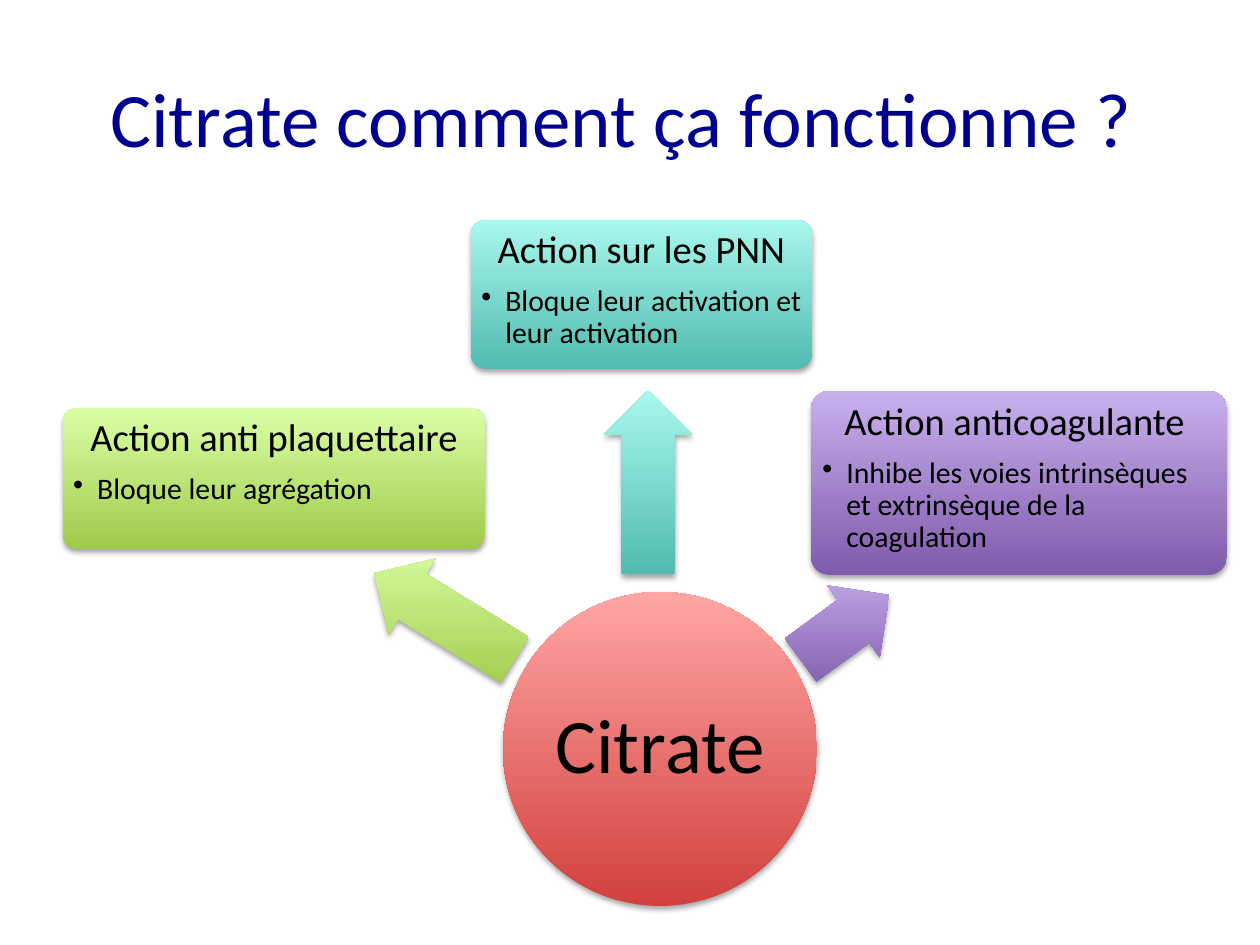
from lxml.etree import SubElement
from pptx import Presentation
from pptx.dml.color import RGBColor
from pptx.enum.shapes import MSO_SHAPE as Kind
from pptx.enum.text import MSO_ANCHOR as Anchor, PP_ALIGN as Align
from pptx.oxml import parse_xml
from pptx.oxml.ns import nsdecls, qn
from pptx.util import Pt

SCALE = 914400 / 126
FONT = "Calibri"
NAVY = RGBColor(0x00, 0x00, 0x90)
BLACK = RGBColor(0x00, 0x00, 0x00)
RED = RGBColor(0xD1, 0x40, 0x3C), RGBColor(0xFF, 0xA6, 0xA5)
GREEN = RGBColor(0xA0, 0xCA, 0x4A), RGBColor(0xDA, 0xFF, 0xA5)
TEAL = RGBColor(0x52, 0xBB, 0xAF), RGBColor(0xA8, 0xF8, 0xED)
PURPLE = RGBColor(0x7F, 0x5B, 0xAB), RGBColor(0xC8, 0xB0, 0xED)
SHADOW = (
    f'<a:outerShdw {nsdecls("a")} blurRad="40000" dist="23000" dir="5400000" '
    'rotWithShape="0"><a:srgbClr val="000000"><a:alpha val="35000"/>'
    '</a:srgbClr></a:outerShdw>'
)
ACTIONS = [
    (GREEN, (63, 408, 422, 141), "Action anti plaquettaire",
     "Bloque leur agrégation", (362, 572, 165, 89), 31.6),
    (TEAL, (471, 220, 341, 149), "Action sur les PNN",
     "Bloque leur activation et leur activation", (556, 438, 184, 89), 90),
    (PURPLE, (811, 391, 416, 184), "Action anticoagulante ",
     "Inhibe les voies intrinsèques et extrinsèque de la coagulation",
     (790, 583, 110, 89), 143.8),
]


def px(size):
    """Turn px into EMU."""
    return round(size * SCALE)


def style(par, size, color=BLACK):
    """Set the font of a paragraph."""
    par.font.name = FONT
    par.font.size = Pt(size)
    par.font.color.rgb = color


def add_form(slide, kind, box, colors):
    """Add a shape with an upright gradient and a soft shadow."""
    form = slide.shapes.add_shape(kind, *map(px, box))
    form.fill.gradient()
    form.fill.gradient_angle = 90
    for stop, color in zip(form.fill.gradient_stops, colors):
        stop.color.rgb = color
    props = form.element.spPr
    props.find(qn("a:gradFill")).set("rotWithShape", "0")
    form.line.fill.background()
    form.shadow.inherit = False
    props.find(qn("a:effectLst")).append(parse_xml(SHADOW))
    return form


def set_frame(form, inset, anchor):
    """Set the insets and anchor of a shape's text."""
    frame = form.text_frame
    frame.word_wrap = True
    frame.vertical_anchor = anchor
    frame.margin_left = frame.margin_right = px(inset)
    frame.margin_top = frame.margin_bottom = px(inset)
    return frame


def set_head(frame, text, size):
    """Write the centred first line of a frame."""
    par = frame.paragraphs[0]
    par.text = text
    par.alignment = Align.CENTER
    par.line_spacing = 0.9
    par.space_after = Pt(8)
    style(par, size)


def add_bullet(frame, text):
    """Add one bulleted paragraph to a frame."""
    par = frame.add_paragraph()
    par.text = text
    par.level = 1
    par.alignment = Align.LEFT
    par.line_spacing = 0.9
    props = par._p.get_or_add_pPr()
    props.set("marL", str(px(24)))
    props.set("indent", str(px(-24)))
    SubElement(props, qn("a:buChar")).set("char", "•")
    style(par, 17)


def add_title(slide, box, text):
    """Place the title."""
    title = slide.shapes.title
    title.left, title.top, title.width, title.height = map(px, box)
    title.text_frame.text = text
    title.text_frame.vertical_anchor = Anchor.MIDDLE
    par = title.text_frame.paragraphs[0]
    par.alignment = Align.CENTER
    style(par, 44, NAVY)


def add_core(slide, box, text):
    """Add the central circle."""
    core = add_form(slide, Kind.OVAL, box, RED)
    set_head(set_frame(core, 4, Anchor.MIDDLE), text, 44)


def add_arrow(slide, box, colors, angle):
    """Add an arrow turned by an angle."""
    arrow = add_form(slide, Kind.LEFT_ARROW, box, colors)
    arrow.adjustments[0] = 0.6
    arrow.adjustments[1] = 0.5
    arrow.rotation = angle


def add_card(slide, box, colors, head, point):
    """Add a rounded card with a heading and a bullet."""
    card = add_form(slide, Kind.ROUNDED_RECTANGLE, box, colors)
    card.adjustments[0] = 0.1
    frame = set_frame(card, 6, Anchor.TOP)
    set_head(frame, head, 22)
    add_bullet(frame, point)


def main():
    """Build and save the slide."""
    deck = Presentation()
    deck.slide_width, deck.slide_height = px(1260), px(945)
    slide = deck.slides.add_slide(deck.slide_layouts[5])
    add_title(slide, (63, 38, 1134, 158), "Citrate comment ça fonctionne ? ")
    add_core(slide, (503, 592, 314, 314), "Citrate ")
    for colors, box, head, point, spot, angle in ACTIONS:
        add_arrow(slide, spot, colors, angle)
        add_card(slide, box, colors, head, point)
    deck.save("out.pptx")


if __name__ == "__main__":
    main()
